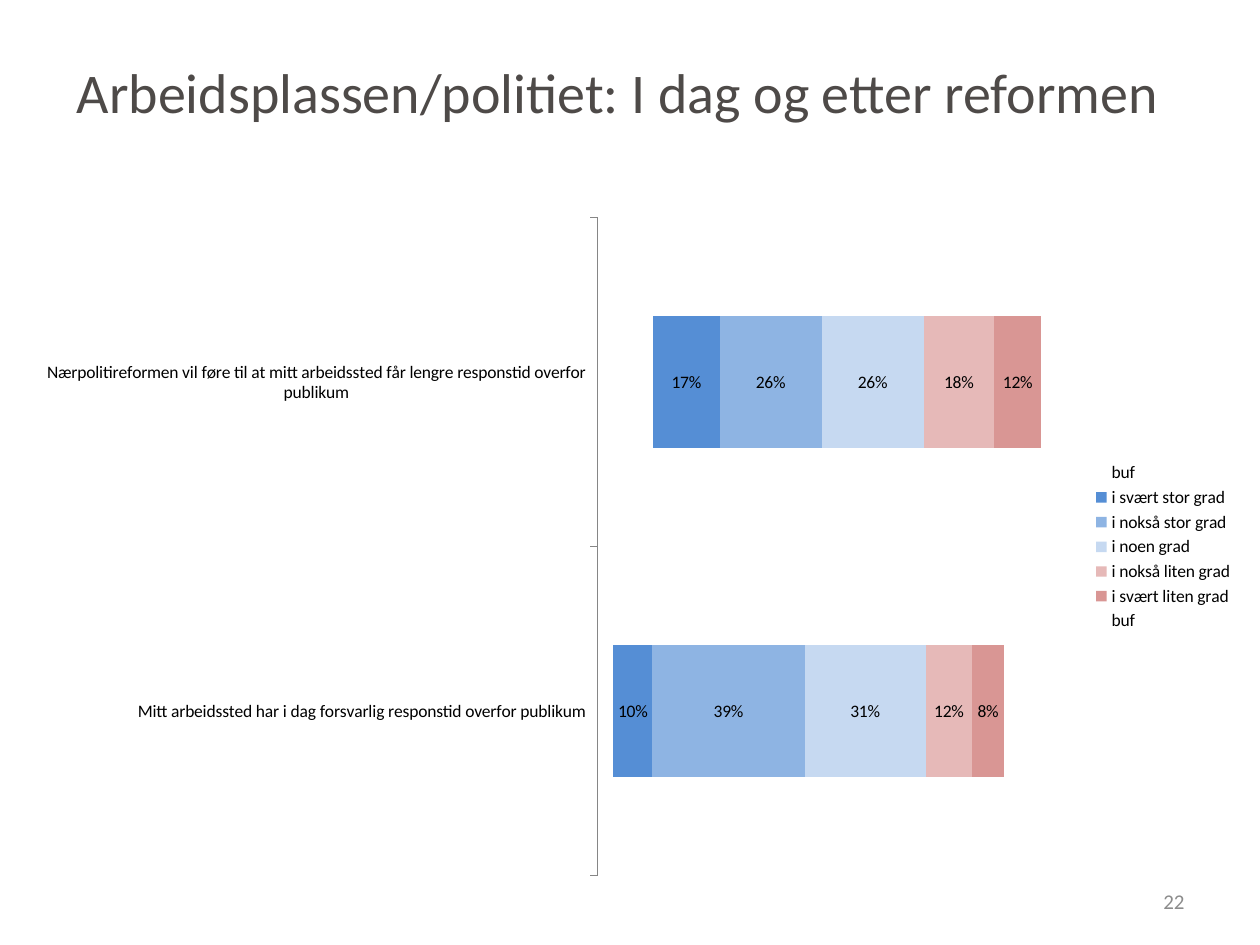
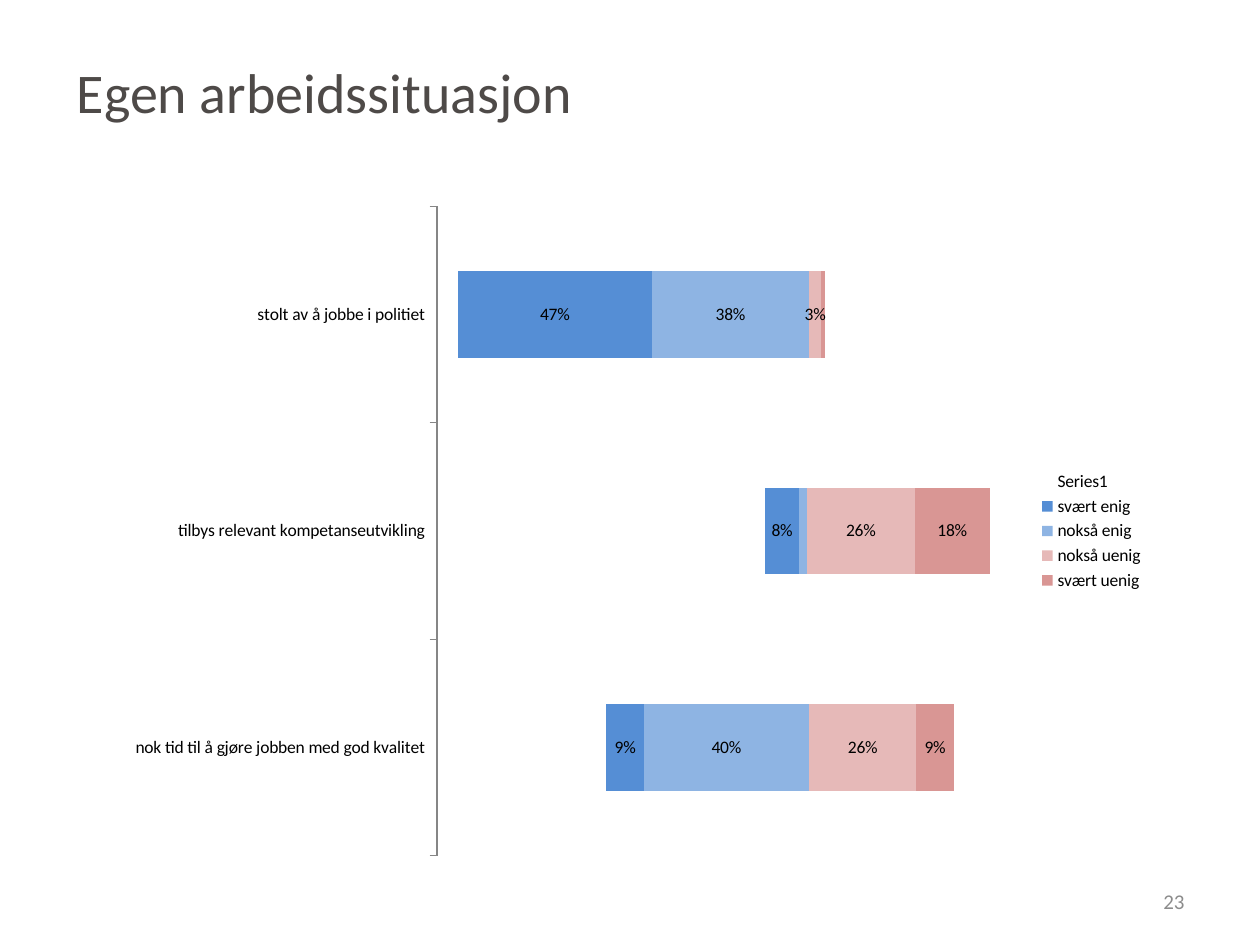
from pptx import Presentation
from pptx.chart.data import CategoryChartData
from pptx.dml.color import RGBColor
from pptx.enum.chart import XL_CHART_TYPE, XL_LEGEND_POSITION, XL_TICK_MARK
from pptx.enum.text import MSO_ANCHOR, PP_ALIGN
from pptx.oxml import parse_xml
from pptx.oxml.ns import nsdecls
from pptx.util import Inches, Pt

FONT = "Calibri"
TITLE_GREY = RGBColor(0x4E, 0x4A, 0x48)
NUMBER_GREY = RGBColor(0x8C, 0x8C, 0x8C)
AXIS_GREY = RGBColor(0x86, 0x86, 0x86)
BLACK = RGBColor(0, 0, 0)
WHITE = RGBColor(0xFF, 0xFF, 0xFF)
STRONG_BLUE = RGBColor(0x55, 0x8E, 0xD5)
MID_BLUE = RGBColor(0x8E, 0xB4, 0xE3)
PALE_BLUE = RGBColor(0xC6, 0xD9, 0xF1)
PALE_RED = RGBColor(0xE6, 0xB9, 0xB8)
STRONG_RED = RGBColor(0xD9, 0x96, 0x94)

FIRST_PAGE = 22
TITLE_BOX = (0.51, 0.38, 9, 0.69)
NUMBER_BOX = (7.17, 6.95, 2.33, 0.4)

# Answers are (name, colour, shares); colourless or white ones are buffers
# that line the bars up around the neutral point, and carry no labels.
SURVEYS = [
    {
        "title": "Arbeidsplassen/politiet: I dag og etter reformen",
        "box": (0.18, 1.62, 9.71, 5.44),
        "range": (0.08, 0.68),
        "statements": [
            "Mitt arbeidssted har i dag forsvarlig responstid overfor publikum",
            "Nærpolitireformen vil føre til at mitt arbeidssted får lengre "
            "responstid overfor publikum",
        ],
        "answers": [
            ("buf", None, (0.2, 0.3)),
            ("i svært stor grad", STRONG_BLUE, (0.1, 0.17)),
            ("i nokså stor grad", MID_BLUE, (0.39, 0.26)),
            ("i noen grad", PALE_BLUE, (0.31, 0.26)),
            ("i nokså liten grad", PALE_RED, (0.12, 0.18)),
            ("i svært liten grad", STRONG_RED, (0.08, 0.12)),
            ("buf", WHITE, (0.8, 0.7)),
        ],
        "legend_hides": [],
    },
    {
        "title": "Egen arbeidssituasjon",
        "box": (0.91, 1.53, 8.27, 5.37),
        "range": (0.05, 0.75),
        "statements": [
            "nok tid til å gjøre jobben med god kvalitet",
            "tilbys relevant kompetanseutvikling",
            "stolt av å jobbe i politiet",
        ],
        "answers": [
            ("Series1", None, (0.51, 0.89, 0.15)),
            ("svært enig", STRONG_BLUE, (0.09, 0.08, 0.47)),
            ("nokså enig", MID_BLUE, (0.4, 0.02, 0.38)),
            ("nokså uenig", PALE_RED, (0.26, 0.26, 0.03)),
            ("svært uenig", STRONG_RED, (0.09, 0.18, 0.01)),
            ("", None, (0.65, 0.56, 0.96)),
        ],
        "legend_hides": [0],
    },
]
SMALLEST_LABELLED = 0.03


def inches(box):
    return [Inches(length) for length in box]


def style(font, size, color):
    font.name, font.size = FONT, Pt(size)
    font.color.rgb = color


def deleted(tag, index):
    """Chart element that hides one label or legend entry."""
    return parse_xml(f'<c:{tag} {nsdecls("c")}><c:idx val="{index}"/>'
                     f'<c:delete val="1"/></c:{tag}>')


def add_title(slide, text):
    title = slide.shapes.title
    title.left, title.top, title.width, title.height = inches(TITLE_BOX)
    title.text_frame.text = text
    title.text_frame.vertical_anchor = MSO_ANCHOR.MIDDLE
    heading = title.text_frame.paragraphs[0]
    heading.alignment = PP_ALIGN.LEFT
    style(heading.font, 32, TITLE_GREY)


def add_page_number(slide, number):
    frame = slide.shapes.add_textbox(*inches(NUMBER_BOX)).text_frame
    frame.word_wrap = True
    frame.vertical_anchor = MSO_ANCHOR.MIDDLE
    page = frame.paragraphs[0]
    page.text = str(number)
    page.alignment = PP_ALIGN.RIGHT
    style(page.font, 12, NUMBER_GREY)


def format_answer(series, color, shares):
    if color is None:
        series.format.fill.background()
        return
    series.format.fill.solid()
    series.format.fill.fore_color.rgb = color
    if color == WHITE:
        return
    labels = series.data_labels
    labels.show_value = True
    labels.number_format, labels.number_format_is_linked = "0%", False
    style(labels.font, 10, BLACK)
    tiny = [i for i, share in enumerate(shares) if share < SMALLEST_LABELLED]
    for place, index in enumerate(tiny):
        labels._element.insert(place, deleted("dLbl", index))


def add_survey_chart(slide, survey):
    data = CategoryChartData(number_format="0%")
    data.categories = survey["statements"]
    for name, _, shares in survey["answers"]:
        data.add_series(name, shares)
    chart = slide.shapes.add_chart(XL_CHART_TYPE.BAR_STACKED_100,
                                   *inches(survey["box"]), data).chart
    chart.has_title = False
    style(chart.font, 10, BLACK)

    # Bars
    bars = chart.plots[0]
    bars.gap_width, bars.overlap = 150, 100
    bars.vary_by_categories = False
    for series, (_, color, shares) in zip(bars.series, survey["answers"]):
        format_answer(series, color, shares)

    # Axes
    statements, scale = chart.category_axis, chart.value_axis
    statements.major_tick_mark = XL_TICK_MARK.OUTSIDE
    statements.format.line.color.rgb = AXIS_GREY
    scale.minimum_scale, scale.maximum_scale = survey["range"]
    scale.has_major_gridlines = False
    scale.visible = False

    # Legend
    chart.has_legend = True
    chart.legend.position = XL_LEGEND_POSITION.RIGHT
    chart.legend.include_in_layout = False
    for place, index in enumerate(survey["legend_hides"], start=1):
        chart.legend._element.insert(place, deleted("legendEntry", index))


def main():
    deck = Presentation()
    deck.slide_width, deck.slide_height = Inches(10), Inches(7.5)
    title_only = deck.slide_layouts[5]
    for number, survey in enumerate(SURVEYS, start=FIRST_PAGE):
        slide = deck.slides.add_slide(title_only)
        add_title(slide, survey["title"])
        add_survey_chart(slide, survey)
        add_page_number(slide, number)
    deck.save("out.pptx")


if __name__ == "__main__":
    main()
